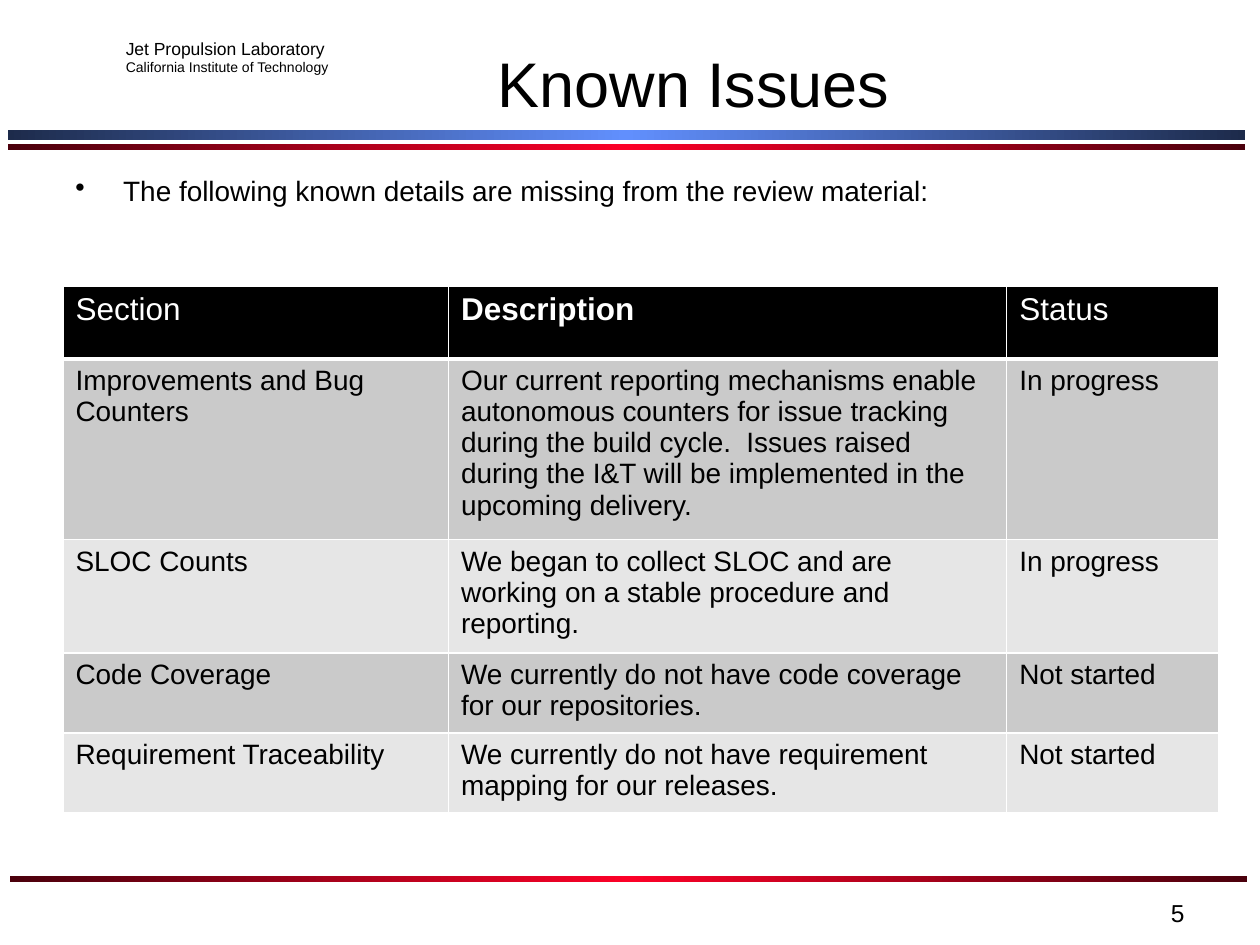
import copy

import pptx
import pptx.dml.color
import pptx.enum.shapes
import pptx.enum.text
import pptx.oxml
import pptx.oxml.ns
import pptx.util

Inches = pptx.util.Inches
Pt = pptx.util.Pt
RGBColor = pptx.dml.color.RGBColor
Align = pptx.enum.text.PP_ALIGN
Anchor = pptx.enum.text.MSO_ANCHOR

BLACK = RGBColor(0x00, 0x00, 0x00)
WHITE = RGBColor(0xFF, 0xFF, 0xFF)
DARK_BLUE = RGBColor(0x1D, 0x2B, 0x4B)
BRIGHT_BLUE = RGBColor(0x61, 0x8F, 0xFD)
DARK_RED = RGBColor(0x4B, 0x00, 0x0C)
BRIGHT_RED = RGBColor(0xFC, 0x01, 0x28)
ODD_ROW = RGBColor(0xCA, 0xCA, 0xCA)
EVEN_ROW = RGBColor(0xE6, 0xE6, 0xE6)
FONT = "Arial"

COLUMN_WIDTHS = (3.06, 4.43, 1.68)
ROW_HEIGHTS = (0.58, 1.34, 0.84, 0.59, 0.59)
ISSUES = (
    ("Section", "Description", "Status"),
    ("Improvements and Bug Counters",
     "Our current reporting mechanisms enable autonomous counters for issue "
     "tracking during the build cycle.  Issues raised during the I&T will be "
     "implemented in the upcoming delivery.",
     "In progress"),
    ("SLOC Counts",
     "We began to collect SLOC and are working on a stable procedure and reporting.",
     "In progress"),
    ("Code Coverage",
     "We currently do not have code coverage for our repositories.",
     "Not started"),
    ("Requirement Traceability",
     "We currently do not have requirement mapping for our releases.",
     "Not started"),
)


def style(para, size, color=BLACK, bold=False):
    para.font.name = FONT
    para.font.size = Pt(size)
    para.font.color.rgb = color
    para.font.bold = bold


def add_bar(page, left, top, height, edge, center):
    """Add a full-width bar that is bright in the middle and dark at both ends."""
    bar = page.shapes.add_shape(
        pptx.enum.shapes.MSO_SHAPE.RECTANGLE,
        Inches(left), Inches(top), Inches(9.82), Inches(height))
    bar.shadow.inherit = False
    bar.line.fill.background()
    bar.fill.gradient()
    bar.fill.gradient_angle = 0
    last = bar.fill._fill._gradFill.gsLst[-1]
    last.addprevious(copy.deepcopy(last))
    for stop, position, color in zip(
            bar.fill.gradient_stops, (0, 0.5, 1), (edge, center, edge)):
        stop.position = position
        stop.color.rgb = color


def add_text(page, left, top, width, height, lines, align=Align.LEFT, anchor=Anchor.TOP):
    """Add a text box from (text, size) lines and return its paragraphs."""
    box = page.shapes.add_textbox(
        Inches(left), Inches(top), Inches(width), Inches(height))
    frame = box.text_frame
    frame.word_wrap = True
    frame.vertical_anchor = anchor
    frame.text = "\n".join(text for text, size in lines)
    for para, (text, size) in zip(frame.paragraphs, lines):
        para.alignment = align
        style(para, size)
    return frame.paragraphs


def add_bullet_text(page, text):
    para = add_text(page, 0.5, 1.33, 9, 5.37, [("", 16)])[0]
    props = para._p.get_or_add_pPr()
    props.set("marL", str(Inches(0.38)))
    props.set("indent", str(-Inches(0.38)))
    bullet = pptx.oxml.parse_xml(
        f'<a:buChar {pptx.oxml.ns.nsdecls("a")} char="•"/>')
    props.insert(0, bullet)
    para.text = text


def set_borders(cell, bottom_width):
    props = cell._tc.get_or_add_tcPr()
    sides = (("lnL", 1), ("lnR", 1), ("lnT", 1), ("lnB", bottom_width))
    for index, (side, width) in enumerate(sides):
        props.insert(index, pptx.oxml.parse_xml(
            f'<a:{side} {pptx.oxml.ns.nsdecls("a")} w="{Pt(width)}">'
            f'<a:solidFill><a:srgbClr val="{WHITE}"/></a:solidFill></a:{side}>'))


def add_issue_table(page):
    table = page.shapes.add_table(
        len(ISSUES), len(COLUMN_WIDTHS), Inches(0.5), Inches(2.27),
        Inches(sum(COLUMN_WIDTHS)), Inches(sum(ROW_HEIGHTS))).table
    table.first_row = False
    table.horz_banding = False
    for column, width in zip(table.columns, COLUMN_WIDTHS):
        column.width = Inches(width)
    for number, (row, height, texts) in enumerate(zip(table.rows, ROW_HEIGHTS, ISSUES)):
        row.height = Inches(height)
        header = number == 0
        fill = BLACK if header else ODD_ROW if number % 2 else EVEN_ROW
        for cell, text in zip(row.cells, texts):
            cell.text = text
            cell.fill.solid()
            cell.fill.fore_color.rgb = fill
            set_borders(cell, 3 if header else 1)
            style(cell.text_frame.paragraphs[0], 18 if header else 16,
                  WHITE if header else BLACK, text == "Description")


def main():
    deck = pptx.Presentation()
    deck.slide_width = Inches(10)
    deck.slide_height = Inches(7.5)
    page = deck.slides.add_slide(deck.slide_layouts[6])

    add_bar(page, 0.06, 1.03, 0.08, DARK_BLUE, BRIGHT_BLUE)
    add_bar(page, 0.06, 1.14, 0.05, DARK_RED, BRIGHT_RED)
    add_bar(page, 0.08, 6.95, 0.05, DARK_RED, BRIGHT_RED)
    add_text(page, 0.9, 0.25, 1.85, 0.4,
             [("Jet Propulsion Laboratory", 10), ("California Institute of Technology", 8)])
    add_text(page, 2.67, 0.3, 5.67, 0.7, [("Known Issues", 36)],
             Align.CENTER, Anchor.BOTTOM)
    add_bullet_text(page, "The following known details are missing from the review material:")
    add_text(page, 7.17, 7.08, 2.33, 0.27, [("5", 14)], Align.RIGHT)
    add_issue_table(page)

    deck.save("out.pptx")


if __name__ == "__main__":
    main()
